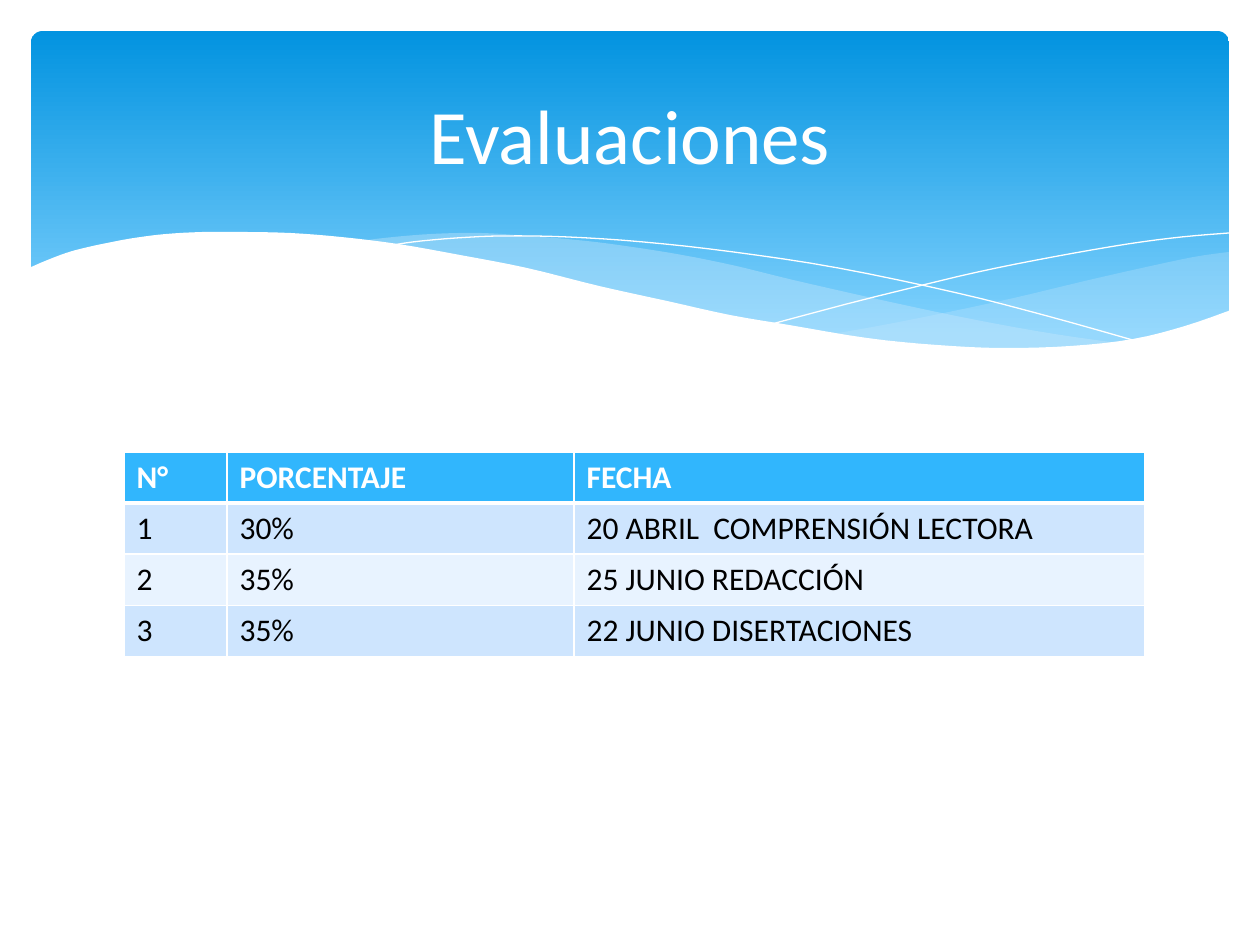
import lxml.etree
import pptx
import pptx.dml.color
import pptx.enum.shapes
import pptx.enum.text
import pptx.oxml
import pptx.oxml.ns
import pptx.util

RGB = pptx.dml.color.RGBColor
WHITE = RGB(0xFF, 0xFF, 0xFF)
BLACK = RGB(0x00, 0x00, 0x00)
SKY_TOP = RGB(0x02, 0x93, 0xE0)
SKY_BOTTOM = RGB(0x83, 0xD3, 0xFE)
WAVE = RGB(0xC6, 0xE7, 0xFC)
HEADER = RGB(0x31, 0xB6, 0xFD)
BANDS = (RGB(0xCE, 0xE5, 0xFE), RGB(0xE8, 0xF3, 0xFF))
FONT = "Calibri"

# Curves of the banner, as key points in px from its box
RIGHT_CREST = [(1229, 252), (1194, 257), (1142, 268), (1085, 281), (1014, 298),
               (949, 312), (889, 324), (833, 334)]
RIGHT_TROUGH = [(833, 334), (888, 341), (938, 346), (984, 349), (1026, 350),
                (1064, 348), (1099, 345), (1130, 340), (1160, 334), (1187, 326),
                (1229, 311)]
MIDDLE_CREST = [(1125, 344), (1054, 334), (976, 320), (890, 302), (793, 280),
                (736, 266), (682, 255), (632, 247), (586, 241), (529, 236),
                (479, 233), (433, 234), (394, 237), (360, 241)]
MIDDLE_TROUGH = [(360, 241), (431, 251), (509, 266), (566, 280), (668, 302),
                 (757, 321), (838, 335), (911, 343), (973, 349), (1030, 350),
                 (1080, 348), (1125, 344)]
FALLING_LINE = [(389, 246), (413, 242), (457, 238), (505, 236), (567, 237),
                (643, 242), (733, 252), (838, 268), (957, 293), (1047, 316),
                (1143, 343)]
RISING_LINE = [(772, 324), (847, 304), (907, 289), (978, 272), (1053, 257),
               (1128, 244), (1182, 237), (1229, 233)]
FRONT_CREST = [(1231, 310), (1185, 326), (1133, 339), (1071, 346), (1002, 348),
               (937, 345), (867, 338), (789, 325), (730, 315), (667, 301),
               (599, 286), (527, 268), (460, 255), (398, 244), (341, 237),
               (290, 233), (243, 232), (203, 232), (166, 234), (134, 238),
               (107, 243), (84, 248), (66, 253), (45, 261), (29, 268)]
FRONT_BASE = [(29, 415), (1231, 415)]

ROWS = [
    ("N°", "PORCENTAJE", "FECHA"),
    ("1", "30%", "20 ABRIL  COMPRENSIÓN LECTORA"),
    ("2", "35%", "25 JUNIO REDACCIÓN"),
    ("3", "35%", "22 JUNIO DISERTACIONES"),
]


def px(length):
    return pptx.util.Emu(round(length * 914400 / 126))


def smooth(points, steps=4):
    """Catmull-Rom curve through the points."""
    padded = [points[0], *points, points[-1]]
    curve = [points[0]]
    for a, b, c, d in zip(padded, padded[1:], padded[2:], padded[3:]):
        for step in range(1, steps + 1):
            t = step / steps
            curve.append(tuple(
                (2 * q + (r - p) * t + (2 * p - 5 * q + 4 * r - s) * t ** 2
                 + (3 * q - p - 3 * r + s) * t ** 3) / 2
                for p, q, r, s in zip(a, b, c, d)))
    return curve


def add_outline(page, box, points, close):
    left, top = box[:2]
    start, *rest = [(px(left + x), px(top + y)) for x, y in points]
    builder = page.shapes.build_freeform(*start)
    builder.add_line_segments(rest, close=close)
    shape = builder.convert_to_shape()
    shape.shadow.inherit = False
    return shape


def add_wave(page, box, points, color, opacity=100):
    wave = add_outline(page, box, points, True)
    wave.fill.solid()
    wave.fill.fore_color.rgb = color
    wave.line.fill.background()
    if opacity < 100:
        tint = wave.fill._xPr.find(".//" + pptx.oxml.ns.qn("a:srgbClr"))
        lxml.etree.SubElement(tint, pptx.oxml.ns.qn("a:alpha"), val=str(opacity * 1000))


def add_banner(page, box):
    left, top, width, _ = box
    margin = 31

    # Blue panel
    panel = page.shapes.add_shape(
        pptx.enum.shapes.MSO_SHAPE.ROUNDED_RECTANGLE,
        px(left + margin), px(top + margin), px(width - 2 * margin), px(340))
    panel.adjustments[0] = 0.034
    panel.shadow.inherit = False
    panel.line.fill.background()
    panel.fill.gradient()
    panel.fill.gradient_angle = 270
    for stop, position, color in zip(panel.fill.gradient_stops, (0, 0.9), (SKY_TOP, SKY_BOTTOM)):
        stop.position = position
        stop.color.rgb = color

    # Pale waves, hairlines and the white wave in front
    add_wave(page, box, smooth(RIGHT_CREST) + smooth(RIGHT_TROUGH), WAVE, 29)
    add_wave(page, box, smooth(MIDDLE_CREST) + smooth(MIDDLE_TROUGH), WAVE, 40)
    for points in (FALLING_LINE, RISING_LINE):
        hairline = add_outline(page, box, smooth(points), False)
        hairline.fill.background()
        hairline.line.color.rgb = WHITE
        hairline.line.width = pptx.util.Pt(0)
    add_wave(page, box, smooth(FRONT_CREST) + FRONT_BASE, WHITE)


def place_title(page, box, text):
    title = page.shapes.title
    title.left, title.top, title.width, title.height = map(px, box)
    title.text_frame.text = text
    title.text_frame.vertical_anchor = pptx.enum.text.MSO_ANCHOR.MIDDLE
    para = title.text_frame.paragraphs[0]
    para.alignment = pptx.enum.text.PP_ALIGN.CENTER
    para.font.name = FONT
    para.font.size = pptx.util.Pt(44)
    para.font.color.rgb = WHITE
    page.shapes._spTree.append(title._element)  # in front of the banner


def set_borders(cell, **widths):
    for side, points in widths.items():
        cell._tc.get_or_add_tcPr().append(pptx.oxml.parse_xml(
            f'<a:ln{side} {pptx.oxml.ns.nsdecls("a")} w="{pptx.util.Pt(points)}">'
            f'<a:solidFill><a:srgbClr val="{WHITE}"/></a:solidFill></a:ln{side}>'))


def add_grades(page, box, widths):
    table = page.shapes.add_table(len(ROWS), len(widths), *map(px, box)).table
    for column, width in zip(table.columns, widths):
        column.width = px(width)
    for i, row in enumerate(ROWS):
        heading = i == 0
        for j, text in enumerate(row):
            cell = table.cell(i, j)
            set_borders(cell, L=1, R=1, T=3 if i == 1 else 1, B=3 if heading else 1)
            cell.fill.solid()
            cell.fill.fore_color.rgb = HEADER if heading else BANDS[(i - 1) % 2]
            cell.text = text
            font = cell.text_frame.paragraphs[0].font
            font.name = FONT
            font.size = pptx.util.Pt(18)
            font.bold = heading
            font.color.rgb = WHITE if heading else BLACK


def main():
    deck = pptx.Presentation()
    deck.slide_width, deck.slide_height = px(1260), px(945)
    page = deck.slides.add_slide(deck.slide_layouts[5])
    add_banner(page, (0, 0, 1260, 415))
    add_grades(page, (124, 452, 1021, 204), (103, 347, 571))
    place_title(page, (63, 47, 1134, 173), "Evaluaciones")
    deck.save("out.pptx")


if __name__ == "__main__":
    main()
